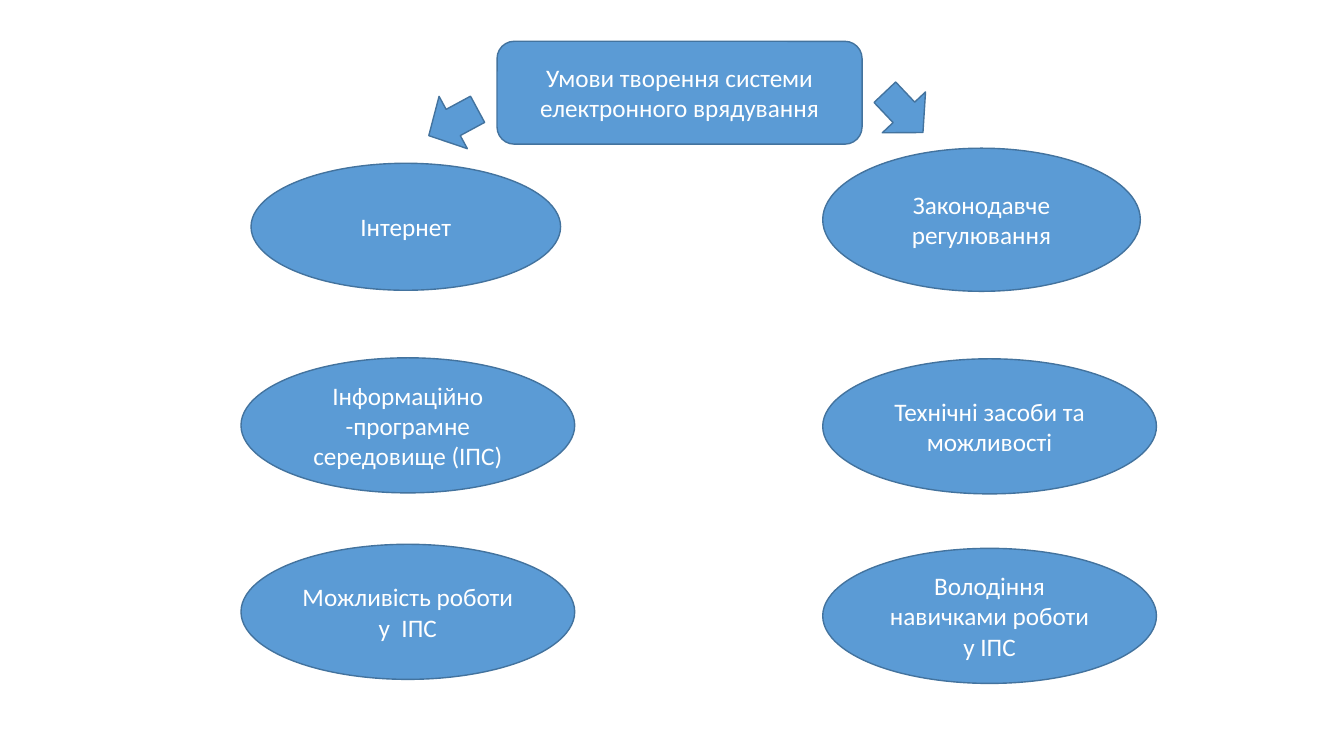
from dataclasses import dataclass

import pptx
import pptx.dml.color
import pptx.enum.shapes
import pptx.enum.text
import pptx.util

PX = 9144
MSO = pptx.enum.shapes.MSO_SHAPE
FILL = "5B9BD5"
OUTLINE = "43739E"
WHITE = "FFFFFF"


def color(value: str) -> pptx.dml.color.RGBColor:
    return pptx.dml.color.RGBColor.from_string(value)


FRAME_FORMAT = {
    "word_wrap": True,
    "vertical_anchor": pptx.enum.text.MSO_ANCHOR.MIDDLE,
}
FONT_FORMAT = {"name": "Calibri", "size": pptx.util.Pt(18)}


@dataclass(frozen=True)
class Node:
    kind: MSO
    left: int
    top: int
    width: int
    height: int
    text: str = ""
    rotation: float = 0


NODES = [
    Node(MSO.ROUNDED_RECTANGLE, 493, 41, 362, 102,
         "Умови творення системи електронного врядування"),
    Node(MSO.OVAL, 249, 162, 307, 126, "Інтернет"),
    Node(MSO.OVAL, 816, 147, 315, 142, "Законодавче регулювання"),
    Node(MSO.OVAL, 816, 356, 331, 134, "Технічні засоби та можливості"),
    Node(MSO.OVAL, 239, 355, 331, 134, "Інформаційно -програмне середовище (ІПС)"),
    Node(MSO.OVAL, 239, 540, 331, 134, "Можливість роботи у  ІПС"),
    Node(MSO.OVAL, 816, 544, 331, 134, "Володіння навичками роботи у ІПС"),
    Node(MSO.DOWN_ARROW, 420, 94, 59, 55, rotation=61.6),
    Node(MSO.DOWN_ARROW, 867, 84, 59, 55, rotation=316.6),
]


def apply(target: object, values: dict) -> None:
    for name, value in values.items():
        setattr(target, name, value)


def write_text(tf: pptx.text.text.TextFrame, text: str) -> None:
    apply(tf, FRAME_FORMAT)
    p = tf.paragraphs[0]
    p.alignment = pptx.enum.text.PP_ALIGN.CENTER
    r = p.add_run()
    r.text = text
    apply(r.font, FONT_FORMAT)
    r.font.color.rgb = color(WHITE)


def draw_node(s: pptx.slide.Slide, node: Node) -> None:
    box = (node.left, node.top, node.width, node.height)
    sp = s.shapes.add_shape(node.kind, *(v * PX for v in box))
    sp.rotation = node.rotation
    sp.shadow.inherit = False
    sp.fill.solid()
    sp.fill.fore_color.rgb = color(FILL)
    sp.line.color.rgb = color(OUTLINE)
    sp.line.width = pptx.util.Pt(1)
    if node.text:
        write_text(sp.text_frame, node.text)


def main() -> None:
    prs = pptx.Presentation()
    apply(prs, {"slide_width": 1333 * PX, "slide_height": 750 * PX})
    s = prs.slides.add_slide(prs.slide_layouts[6])
    for node in NODES:
        draw_node(s, node)
    prs.save("out.pptx")


if __name__ == "__main__":
    main()
